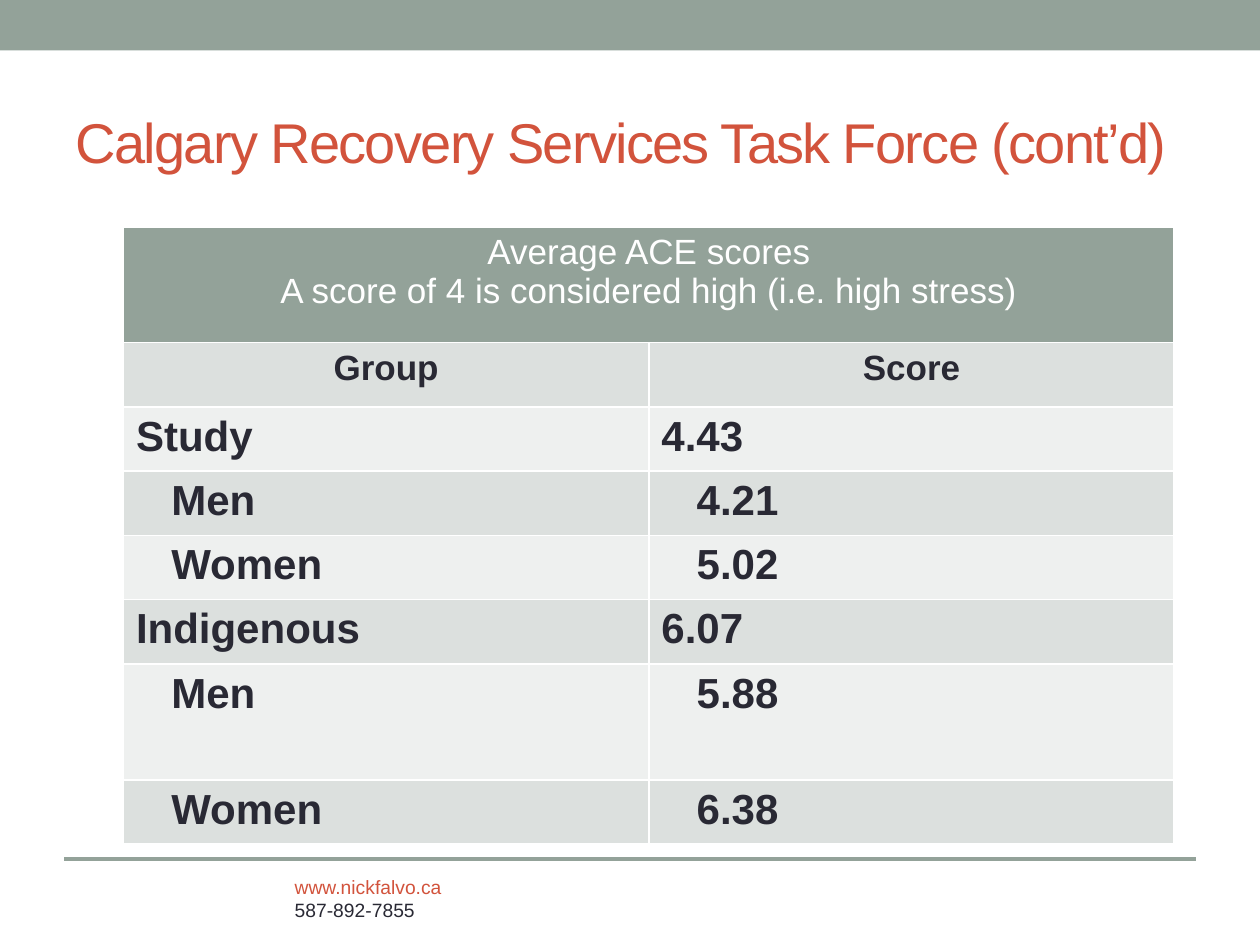
from lxml.etree import SubElement
from pptx import Presentation
from pptx.dml.color import RGBColor
from pptx.enum.shapes import MSO_CONNECTOR, MSO_SHAPE
from pptx.enum.text import MSO_ANCHOR, PP_ALIGN
from pptx.oxml.ns import qn
from pptx.util import Inches, Pt

TITLE = "Calgary Recovery Services Task Force (cont’d)"
HEADING = ["Average ACE scores", "A score of 4 is considered high (i.e. high stress)"]
COLUMNS = ("Group", "Score")
SCORES = [  # group, score, is a subgroup
    ("Study", "4.43", False),
    ("Men", "4.21", True),
    ("Women", "5.02", True),
    ("Indigenous", "6.07", False),
    ("Men", "5.88", True),
    ("Women", "6.38", True),
]
SAGE, RED, DARK, WHITE = "93A299", "D2533C", "292934", "FFFFFF"
BANDS = ("EEF0EF", "DCE0DE")
ROW_HEIGHT, TALL_HEIGHT, TALL_ROWS = 0.51, 0.92, (0, 6)
SUBGROUP_INDENT = 0.28


def rgb(value):
    return RGBColor.from_string(value)


def add_text(tf, text, size=20, color=DARK, bold=False, align=PP_ALIGN.LEFT,
             indent=0, spacing=None):
    """Write text in the first empty paragraph, or in a new one."""
    p = tf.paragraphs[0] if not tf.text else tf.add_paragraph()
    p.alignment = align
    if indent:
        p._p.get_or_add_pPr().set("marL", str(Inches(indent)))
    r = p.add_run()
    r.text = text
    r.font.name = "Arial"
    r.font.size = Pt(size)
    r.font.bold = bold
    r.font.color.rgb = rgb(color)
    if spacing is not None:
        r._r.get_or_add_rPr().set("spc", str(int(spacing * 100)))


def style_cell(cell, fill):
    """Give the cell white 1 pt borders and a solid fill."""
    tc_pr = cell._tc.get_or_add_tcPr()
    for side in ("lnL", "lnR", "lnT", "lnB"):
        ln = SubElement(tc_pr, qn(f"a:{side}"), w=str(Pt(1)))
        SubElement(SubElement(ln, qn("a:solidFill")), qn("a:srgbClr"), val=WHITE)
    cell.fill.solid()
    cell.fill.fore_color.rgb = rgb(fill)


prs = Presentation()
prs.slide_width, prs.slide_height = Inches(10), Inches(7.5)
s = prs.slides.add_slide(prs.slide_layouts[5])

band = s.shapes.add_shape(MSO_SHAPE.RECTANGLE, 0, 0, Inches(10), Inches(0.4))
band.shadow.inherit = False
band.fill.solid()
band.fill.fore_color.rgb = rgb(SAGE)
band.line.fill.background()

rule = s.shapes.add_connector(MSO_CONNECTOR.STRAIGHT, Inches(0.51), Inches(6.82),
                              Inches(9.49), Inches(6.82))
rule.line.color.rgb = rgb(SAGE)
rule.line.width = Pt(2.08)
SubElement(rule._element.spPr, qn("a:effectLst"))

contact = s.shapes.add_textbox(Inches(2.24), Inches(6.9), Inches(4.02), Inches(0.47))
contact.text_frame.word_wrap = True
add_text(contact.text_frame, "www.nickfalvo.ca", size=11, color=RED)
add_text(contact.text_frame, "587-892-7855", size=11)

title = s.shapes.title
title.left, title.top = Inches(0.5), Inches(0.58)
title.width, title.height = Inches(9), Inches(1.08)
title.text_frame.vertical_anchor = MSO_ANCHOR.MIDDLE
add_text(title.text_frame, TITLE, size=32, color=RED, spacing=-1)

heights = [TALL_HEIGHT if i in TALL_ROWS else ROW_HEIGHT for i in range(len(SCORES) + 2)]
table = s.shapes.add_table(len(heights), len(COLUMNS), Inches(0.98), Inches(1.8),
                           Inches(8.34), Inches(sum(heights))).table
for row, height in zip(table.rows, heights):
    row.height = Inches(height)
for i, row in enumerate(table.rows):
    for cell in row.cells:
        style_cell(cell, BANDS[i % 2] if i else SAGE)

heading = table.cell(0, 0)
heading.merge(table.cell(0, 1))
for line in HEADING:
    add_text(heading.text_frame, line, color=WHITE, align=PP_ALIGN.CENTER)
for col, name in enumerate(COLUMNS):
    add_text(table.cell(1, col).text_frame, name, bold=True, align=PP_ALIGN.CENTER)
for i, (group, score, is_subgroup) in enumerate(SCORES, start=2):
    for col, text in enumerate((group, score)):
        add_text(table.cell(i, col).text_frame, text, size=24, bold=True,
                 indent=SUBGROUP_INDENT if is_subgroup else 0)

prs.save("out.pptx")
